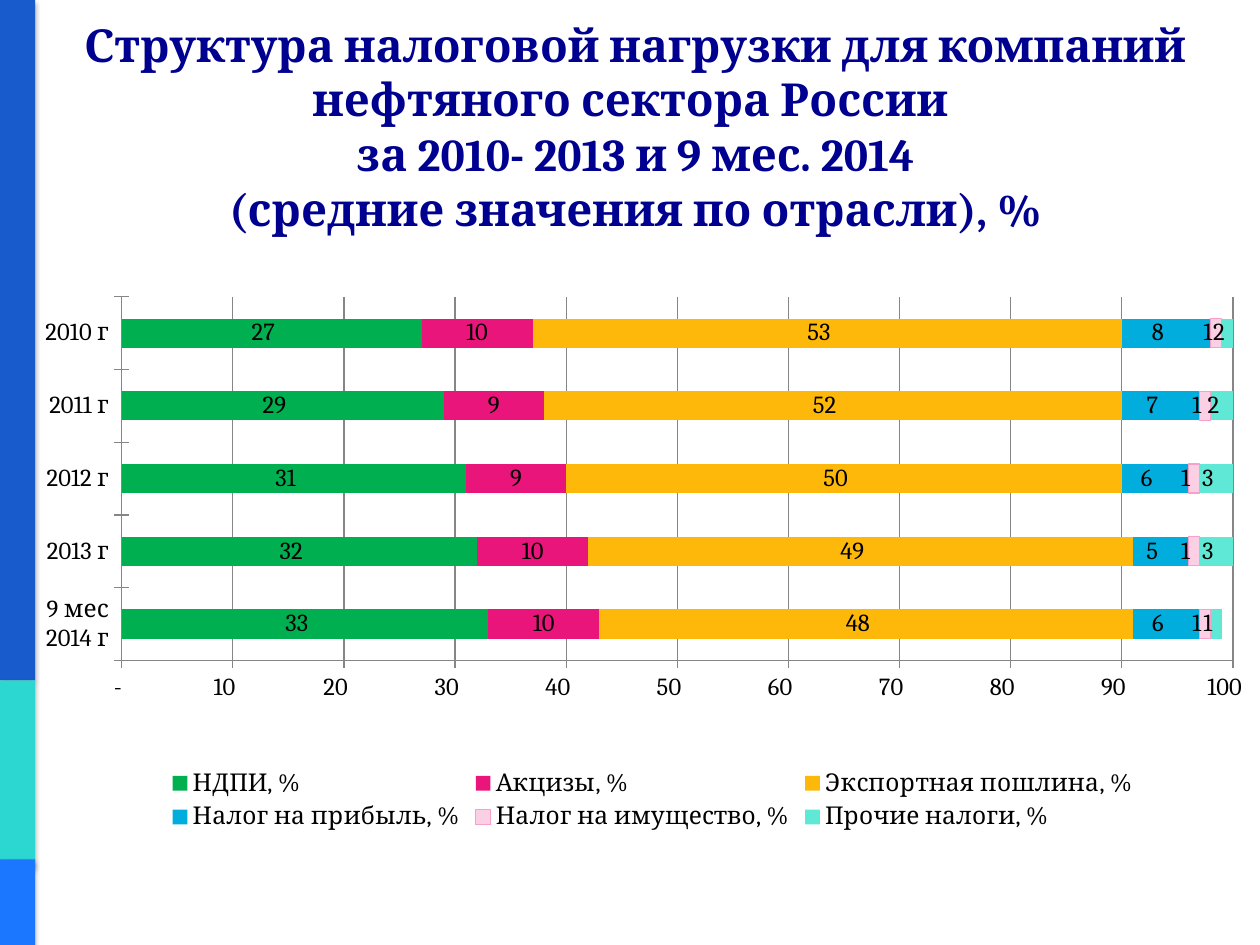
from pptx import Presentation
from pptx.chart.data import CategoryChartData
from pptx.dml.color import RGBColor
from pptx.enum.chart import XL_CHART_TYPE as ChartType, XL_LEGEND_POSITION as LegendPos, XL_TICK_MARK as Tick
from pptx.enum.shapes import MSO_SHAPE as Preset
from pptx.enum.text import MSO_ANCHOR as Anchor, PP_ALIGN as Align
from pptx.oxml import parse_xml
from pptx.oxml.ns import nsdecls
from pptx.util import Inches, Pt

FONT = "Cambria"
BLACK = RGBColor(0x00, 0x00, 0x00)
NAVY = RGBColor(0x00, 0x00, 0x90)
GREY = RGBColor(0x86, 0x86, 0x86)
PINK_EDGE = RGBColor(0xF7, 0xA1, 0xCA)
BLUE = RGBColor(0x18, 0x5B, 0xCD)
TURQUOISE = RGBColor(0x2C, 0xD6, 0xD1)
BRIGHT_BLUE = RGBColor(0x1B, 0x77, 0xFF)

STRIPES = [(0, 5.4, BLUE), (5.4, 1.48, TURQUOISE), (6.82, 0.71, BRIGHT_BLUE)]
TITLE = ("Структура налоговой нагрузки для компаний нефтяного сектора России \n"
         "за 2010- 2013 и 9 мес. 2014\n(средние значения по отрасли), %")
PERIODS = ["9 мес 2014 г", "2013 г", "2012 г", "2011 г", "2010 г"]
PROPERTY_TAX = "Налог на имущество, %"
TAXES = [
    ("НДПИ, %", (33, 32, 31, 29, 27), RGBColor(0x00, 0xB0, 0x50)),
    ("Акцизы, %", (10, 10, 9, 9, 10), RGBColor(0xEA, 0x15, 0x7A)),
    ("Экспортная пошлина, %", (48, 49, 50, 52, 53), RGBColor(0xFE, 0xB8, 0x0A)),
    ("Налог на прибыль, %", (6, 5, 6, 7, 8), RGBColor(0x00, 0xAD, 0xDC)),
    (PROPERTY_TAX, (1, 1, 1, 1, 1), RGBColor(0xFB, 0xD0, 0xE4)),
    ("Прочие налоги, %", (1, 3, 3, 2, 2), RGBColor(0x5F, 0xE8, 0xD6)),
]
ACCOUNTING = '_-* #,##0_р_._-;\\-* #,##0_р_._-;_-* "-"?'
EXCISE_FORMATS = {"Акцизы, %": "#,##0"}


def add_sidebar(slide, left, width):
    """Stack the coloured stripes along the slide edge."""
    for top, height, color in STRIPES:
        stripe = slide.shapes.add_shape(
            Preset.RECTANGLE, Inches(left), Inches(top), Inches(width), Inches(height))
        stripe.fill.solid()
        stripe.fill.fore_color.rgb = color
        stripe.line.fill.background()
        stripe.shadow.inherit = False
        stripe.element.spPr.remove(stripe.element.spPr[-1])
        stripe.element.spPr.append(parse_xml(
            f'<a:effectLst {nsdecls("a")}><a:outerShdw blurRad="{Pt(3.1)}" dist="{Pt(1.8)}" '
            'dir="5400000" rotWithShape="0"><a:srgbClr val="000000"><a:alpha val="35000"/>'
            '</a:srgbClr></a:outerShdw></a:effectLst>'))


def add_title(slide, left, top, width, height):
    """Place the centred heading in its box."""
    heading = slide.shapes.add_textbox(
        Inches(left), Inches(top), Inches(width), Inches(height)).text_frame
    heading.word_wrap = True
    heading.vertical_anchor = Anchor.MIDDLE
    paragraph = heading.paragraphs[0]
    paragraph.text = TITLE
    paragraph.alignment = Align.CENTER
    for run in paragraph.runs:
        run.font.name = FONT
        run.font.size = Pt(26)
        run.font.bold = True
        run.font.color.rgb = NAVY


def style_axes(chart):
    """Set ticks, grid lines, scale and number format."""
    values = chart.value_axis
    values.minimum_scale, values.maximum_scale, values.major_unit = 0, 100, 10
    values.has_major_gridlines = True
    values.major_gridlines.format.line.color.rgb = GREY
    values.tick_labels.number_format = ACCOUNTING
    values.tick_labels.number_format_is_linked = False
    for axis in (chart.category_axis, values):
        axis.major_tick_mark = Tick.CROSS
        axis.format.line.color.rgb = GREY


def style_taxes(plot):
    """Colour each tax and label its values."""
    plot.gap_width, plot.overlap = 150, 100
    plot.vary_by_categories = False
    for tax, (name, _, color) in zip(plot.series, TAXES):
        tax.format.fill.solid()
        tax.format.fill.fore_color.rgb = color
        if name == PROPERTY_TAX:
            tax.format.line.color.rgb = PINK_EDGE
            tax.format.line.width = Pt(0.75)
        labels = tax.data_labels
        labels.show_value = True
        labels.number_format = EXCISE_FORMATS.get(name, ACCOUNTING)
        labels.number_format_is_linked = False


def set_plot_box(chart, x, y, w, h):
    """Fix the inner plot area as fractions of the chart."""
    area = chart._chartSpace.chart.plotArea
    for old in area.findall("{*}layout"):
        area.remove(old)
    fractions = "".join(f'<c:{tag} val="{val}"/>' for tag, val in zip("xywh", (x, y, w, h)))
    area.insert(0, parse_xml(
        f'<c:layout {nsdecls("c")}><c:manualLayout><c:layoutTarget val="inner"/>'
        f'<c:xMode val="edge"/><c:yMode val="edge"/>{fractions}</c:manualLayout></c:layout>'))


def add_tax_chart(slide, left, top, width, height):
    """Place the stacked bar chart of the tax structure."""
    tax_data = CategoryChartData()
    tax_data.categories = PERIODS
    for name, shares, _ in TAXES:
        tax_data.add_series(name, shares)
    chart = slide.shapes.add_chart(
        ChartType.BAR_STACKED, Inches(left), Inches(top), Inches(width), Inches(height),
        tax_data).chart
    chart.has_title = False
    chart.font.name = FONT
    chart.font.size = Pt(14)
    chart.font.color.rgb = BLACK
    chart.has_legend = True
    chart.legend.position = LegendPos.BOTTOM
    chart.legend.include_in_layout = False
    style_axes(chart)
    style_taxes(chart.plots[0])
    set_plot_box(chart, 0.07, 0.05, 0.9, 0.64)


def main():
    """Build and save the slide."""
    deck = Presentation()
    deck.slide_width, deck.slide_height = Inches(10), Inches(7.5)
    slide = deck.slides.add_slide(deck.slide_layouts[6])
    add_sidebar(slide, 0, 0.28)
    add_title(slide, 0.28, 0.3, 9.53, 1.4)
    add_tax_chart(slide, 0.28, 2.13, 9.8, 4.51)
    deck.save("out.pptx")


if __name__ == "__main__":
    main()
